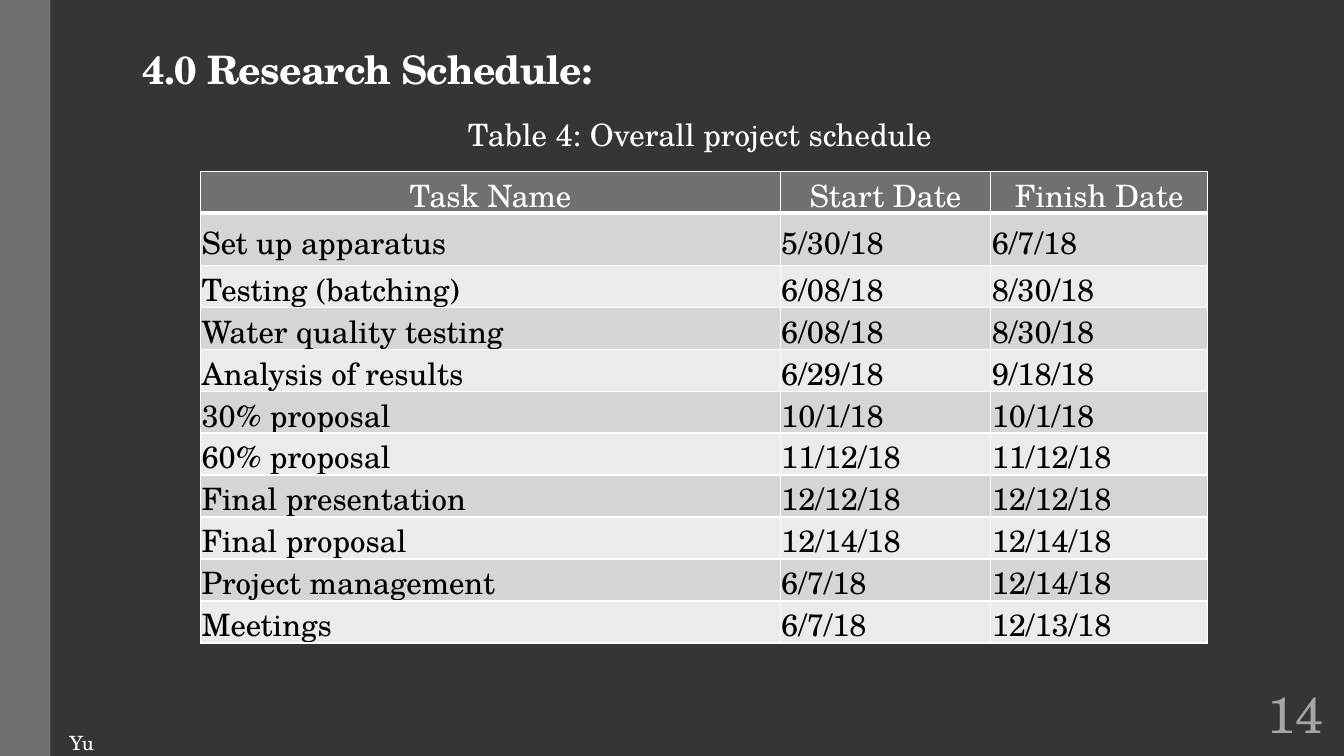
"""Builds the research schedule slide with its project timetable."""
from dataclasses import dataclass
from typing import NamedTuple

from lxml.etree import SubElement
from pptx import Presentation
from pptx.dml.color import RGBColor
from pptx.enum.shapes import MSO_SHAPE as Shape
from pptx.enum.text import MSO_ANCHOR as Anchor, MSO_AUTO_SIZE as AutoSize, PP_ALIGN as Align
from pptx.oxml.ns import qn
from pptx.slide import Slide
from pptx.table import _Cell as Cell
from pptx.text.text import TextFrame
from pptx.util import Pt


@dataclass(frozen=True)
class Theme:
    font: str = "TeX Gyre Schola"
    background: str = "353537"
    accent: str = "6F6F74"
    light: str = "FFFFFF"
    dark: str = "000000"
    muted: str = "A6A6A6"
    bands: tuple[str, str] = ("D5D5D6", "EBEBEB")
    title_size: float = 28
    body_size: float = 22
    number_size: float = 36
    author_size: float = 14


class Box(NamedTuple):
    left: float
    top: float
    width: float
    height: float

    def lengths(self) -> list[Pt]:
        return [Pt(value) for value in self]


class Task(NamedTuple):
    name: str
    start: str
    finish: str


class Label(NamedTuple):
    text: str
    box: Box
    style: dict
    anchor: Anchor = Anchor.TOP
    inset: float | None = None
    wrap: bool = True
    grow: bool = False


THEME = Theme()
PAGE = Box(0, 0, 960, 540)
SIDEBAR = Box(0, 0, 36, 540)
SCHEDULE = Box(143.28, 122.4, 719.28, 337)
COLUMN_WIDTHS = (414, 150.48, 154.8)
ROW_HEIGHT, FIRST_TASK_HEIGHT = 30, 37
THIN_BORDER, HEADER_BORDER = 1, 3
CELL_INSET = 0.72

HEADINGS = Task("Task Name", "Start Date", "Finish Date")
TASKS = (
    Task("Set up apparatus", "5/30/18", "6/7/18"),
    Task("Testing (batching)", "6/08/18", "8/30/18"),
    Task("Water quality testing", "6/08/18", "8/30/18"),
    Task("Analysis of results", "6/29/18", "9/18/18"),
    Task("30% proposal", "10/1/18", "10/1/18"),
    Task("60% proposal", "11/12/18", "11/12/18"),
    Task("Final presentation", "12/12/18", "12/12/18"),
    Task("Final proposal", "12/14/18", "12/14/18"),
    Task("Project management", "6/7/18", "12/14/18"),
    Task("Meetings", "6/7/18", "12/13/18"),
)
LABELS = (
    Label("4.0 Research Schedule:", Box(95.04, 23.76, 361.44, 46.08),
          dict(size=THEME.title_size, bold=True, line_spacing=0.85, tracking=-0.5),
          anchor=Anchor.BOTTOM),
    Label("14", Box(889.2, 486, 72, 46.8),
          dict(size=THEME.number_size, color=THEME.muted, align=Align.CENTER),
          anchor=Anchor.MIDDLE, inset=3.6),
    Label("Table 4: Overall project schedule ", Box(143.28, 79.2, 719.28, 33.84),
          dict(align=Align.CENTER), grow=True),
    Label("Yu", Box(42.48, 518.4, 33.12, 24.48),
          dict(size=THEME.author_size), wrap=False, grow=True),
)


def write(frame: TextFrame, text: str, *, size: float = THEME.body_size,
          color: str = THEME.light, bold: bool = False, align: Align = Align.LEFT,
          line_spacing: float | None = None, tracking: float = 0) -> None:
    paragraph = frame.paragraphs[0]
    paragraph.alignment = align
    paragraph.line_spacing = line_spacing
    run = paragraph.add_run()
    run.text = text
    run.font.name = THEME.font
    run.font.size = Pt(size)
    run.font.bold = bold
    run.font.color.rgb = RGBColor.from_string(color)
    if tracking:
        run._r.get_or_add_rPr().set("spc", str(round(tracking * 100)))


def add_label(slide: Slide, label: Label) -> None:
    frame = slide.shapes.add_textbox(*label.box.lengths()).text_frame
    frame.word_wrap = label.wrap
    frame.auto_size = AutoSize.SHAPE_TO_FIT_TEXT if label.grow else AutoSize.NONE
    frame.vertical_anchor = label.anchor
    if label.inset is not None:
        frame.margin_left = frame.margin_right = Pt(label.inset)
        frame.margin_top = frame.margin_bottom = Pt(label.inset)
    write(frame, label.text, **label.style)


def add_sidebar(slide: Slide) -> None:
    sidebar = slide.shapes.add_shape(Shape.RECTANGLE, *SIDEBAR.lengths())
    sidebar.shadow.inherit = False
    sidebar.fill.solid()
    sidebar.fill.fore_color.rgb = RGBColor.from_string(THEME.accent)
    sidebar.line.fill.background()


def add_borders(cell: Cell, top: float, bottom: float) -> None:
    properties = cell._tc.get_or_add_tcPr()
    edges = {"a:lnL": THIN_BORDER, "a:lnR": THIN_BORDER, "a:lnT": top, "a:lnB": bottom}
    for edge, width in edges.items():
        border = SubElement(properties, qn(edge), w=str(Pt(width)))
        fill = SubElement(border, qn("a:solidFill"))
        SubElement(fill, qn("a:srgbClr"), val=THEME.light)


def fill_cell(cell: Cell, text: str, row: int) -> None:
    is_header = row == 0
    add_borders(cell, top=HEADER_BORDER if row == 1 else THIN_BORDER,
                bottom=HEADER_BORDER if is_header else THIN_BORDER)
    background = THEME.accent if is_header else THEME.bands[(row - 1) % 2]
    cell.fill.solid()
    cell.fill.fore_color.rgb = RGBColor.from_string(background)
    cell.margin_left = cell.margin_right = cell.margin_top = Pt(CELL_INSET)
    cell.margin_bottom = Pt(0)
    cell.vertical_anchor = Anchor.MIDDLE if is_header else Anchor.BOTTOM
    write(cell.text_frame, text, color=THEME.light if is_header else THEME.dark,
          align=Align.CENTER if is_header else Align.LEFT)


def add_schedule(slide: Slide) -> None:
    entries = (HEADINGS, *TASKS)
    schedule = slide.shapes.add_table(
        len(entries), len(COLUMN_WIDTHS), *SCHEDULE.lengths()).table
    for column, width in zip(schedule.columns, COLUMN_WIDTHS):
        column.width = Pt(width)
    for row, entry in enumerate(entries):
        schedule.rows[row].height = Pt(FIRST_TASK_HEIGHT if row == 1 else ROW_HEIGHT)
        for column, text in enumerate(entry):
            fill_cell(schedule.cell(row, column), text, row)


def main() -> None:
    deck = Presentation()
    deck.slide_width, deck.slide_height = Pt(PAGE.width), Pt(PAGE.height)
    slide = deck.slides.add_slide(deck.slide_layouts[6])
    slide.background.fill.solid()
    slide.background.fill.fore_color.rgb = RGBColor.from_string(THEME.background)
    add_sidebar(slide)
    for label in LABELS:
        add_label(slide, label)
    add_schedule(slide)
    deck.save("out.pptx")


if __name__ == "__main__":
    main()
